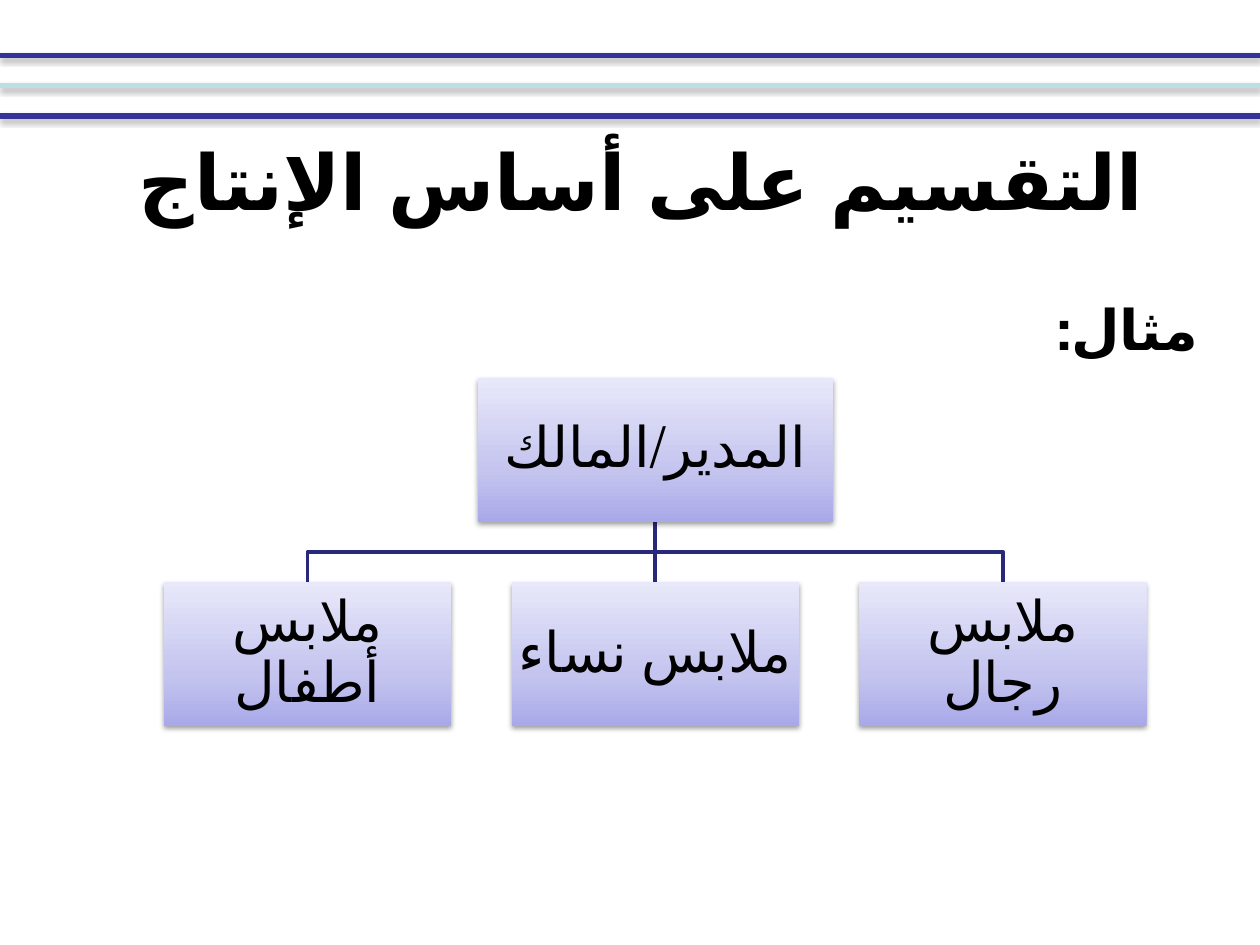
from lxml import etree
from pptx import Presentation
from pptx.dml.color import RGBColor
from pptx.enum.shapes import MSO_CONNECTOR, MSO_SHAPE
from pptx.enum.text import MSO_ANCHOR, PP_ALIGN
from pptx.oxml.ns import qn
from pptx.util import Inches, Pt

STRAIGHT = MSO_CONNECTOR.STRAIGHT
RECTANGLE = MSO_SHAPE.RECTANGLE
TOP, MIDDLE = MSO_ANCHOR.TOP, MSO_ANCHOR.MIDDLE
CENTER, RIGHT = PP_ALIGN.CENTER, PP_ALIGN.RIGHT

FONT = "Arial"
LANGUAGE = "ar-SA"
COLORS = {
    "text": "000000",
    "shadow": "000000",
    "rule": "333399",
    "rule_light": "BBE0E3",
    "branch": "29297B",
    "box_low": "A9A9E9",
    "box_mid": "C4C4EF",
    "box_high": "E8E8FA",
}
BOX_GRADIENT = [(0, "box_low"), (35, "box_mid"), (100, "box_high")]

# Organisation chart, in inches
BOX_HEIGHT = 1.14
OWNER_WIDTH, OWNER_TOP = 2.82, 3
DEPARTMENT_WIDTH, DEPARTMENT_TOP = 2.28, 4.62
CHART_CENTER, DEPARTMENT_PITCH = 5.2, 2.76
DEPARTMENTS = ["ملابس أطفال", "ملابس نساء", "ملابس رجال"]


def rgb(name):
    return RGBColor.from_string(COLORS[name])


def add_color(parent, name):
    return etree.SubElement(parent, qn("a:srgbClr"), val=COLORS[name])


def add_shadow(shape, alpha, distance):
    """Soft shadow falling straight down; alpha in percent, distance in points."""
    effects = etree.SubElement(shape._element.spPr, qn("a:effectLst"))
    shadow = etree.SubElement(
        effects, qn("a:outerShdw"), blurRad=str(Pt(3.1)), dist=str(Pt(distance)),
        dir="5400000", rotWithShape="0")
    etree.SubElement(add_color(shadow, "shadow"), qn("a:alpha"), val=str(alpha * 1000))


def write_arabic(shape, text, size, align, anchor, bold=False, hanging=(0, 0)):
    frame = shape.text_frame
    frame.word_wrap = True
    frame.vertical_anchor = anchor
    paragraph = frame.paragraphs[0]
    paragraph.alignment = align
    properties = paragraph._p.get_or_add_pPr()
    properties.set("rtl", "1")
    margin, indent = hanging
    properties.set("marL", str(Inches(margin)))
    properties.set("indent", str(Inches(indent)))
    run = paragraph.add_run()
    run.text = text
    run.font.name = FONT
    run.font.size = Pt(size)
    run.font.bold = bold
    run.font.color.rgb = rgb("text")
    run._r.get_or_add_rPr().set("lang", LANGUAGE)
    return paragraph


def add_heading(slide, text, area, size, align, anchor, hanging):
    box = slide.shapes.add_textbox(*map(Inches, area))
    return write_arabic(box, text, size, align, anchor, True, hanging)


def add_rule(slide, y, color):
    rule = slide.shapes.add_connector(STRAIGHT, 0, Inches(y), Inches(10), Inches(y))
    rule.line.color.rgb = rgb(color)
    rule.line.width = Pt(3)
    add_shadow(rule, 35, 1.8)


def add_branch(slide, points):
    start, *rest = [(Inches(x), Inches(y)) for x, y in points]
    builder = slide.shapes.build_freeform(*start)
    builder.add_line_segments(rest, close=False)
    branch = builder.convert_to_shape()
    branch.fill.background()
    branch.line.color.rgb = rgb("branch")
    branch.line.width = Pt(2)
    branch.shadow.inherit = False


def add_chart_box(slide, text, center, top, width):
    box = slide.shapes.add_shape(
        RECTANGLE, Inches(center - width / 2), Inches(top),
        Inches(width), Inches(BOX_HEIGHT))
    box.fill.gradient()
    box.fill.gradient_angle = 90
    stops = box._element.spPr.find(".//" + qn("a:gsLst"))
    stops.clear()
    for position, color in BOX_GRADIENT:
        add_color(etree.SubElement(stops, qn("a:gs"), pos=str(position * 1000)), color)
    box.line.fill.background()
    add_shadow(box, 38, 1.6)

    frame = box.text_frame
    frame.margin_left = frame.margin_right = Inches(0.02)
    frame.margin_top = frame.margin_bottom = Inches(0.02)
    write_arabic(box, text, 32, CENTER, MIDDLE).line_spacing = 0.9


def main():
    prs = Presentation()
    prs.slide_width, prs.slide_height = Inches(10), Inches(7.5)
    slide = prs.slides.add_slide(prs.slide_layouts[6])

    # Headings
    example = add_heading(slide, "مثال:", (0.28, 2.02, 9.45, 5.28), 32,
                          RIGHT, TOP, (0.62, -0.5))
    example.line_spacing = 1.5
    add_heading(slide, "التقسيم على أساس الإنتاج", (0.59, 0.76, 9, 1.34), 44,
                CENTER, MIDDLE, (0.81, -0.81))

    # Rules across the top
    for row, color in enumerate(["rule", "rule_light", "rule"]):
        add_rule(slide, 0.44 + 0.24 * row, color)

    # Branches from the owner to each department
    centers = [CHART_CENTER + DEPARTMENT_PITCH * step for step in (-1, 0, 1)]
    owner_bottom = OWNER_TOP + BOX_HEIGHT
    fork = (owner_bottom + DEPARTMENT_TOP) / 2
    for center in centers:
        points = [(CHART_CENTER, owner_bottom), (center, DEPARTMENT_TOP)]
        if center != CHART_CENTER:
            points[1:1] = [(CHART_CENTER, fork), (center, fork)]
        add_branch(slide, points)

    # Owner and departments
    add_chart_box(slide, "المدير/المالك", CHART_CENTER, OWNER_TOP, OWNER_WIDTH)
    for department, center in zip(DEPARTMENTS, centers):
        add_chart_box(slide, department, center, DEPARTMENT_TOP, DEPARTMENT_WIDTH)

    prs.save("out.pptx")


if __name__ == "__main__":
    main()
